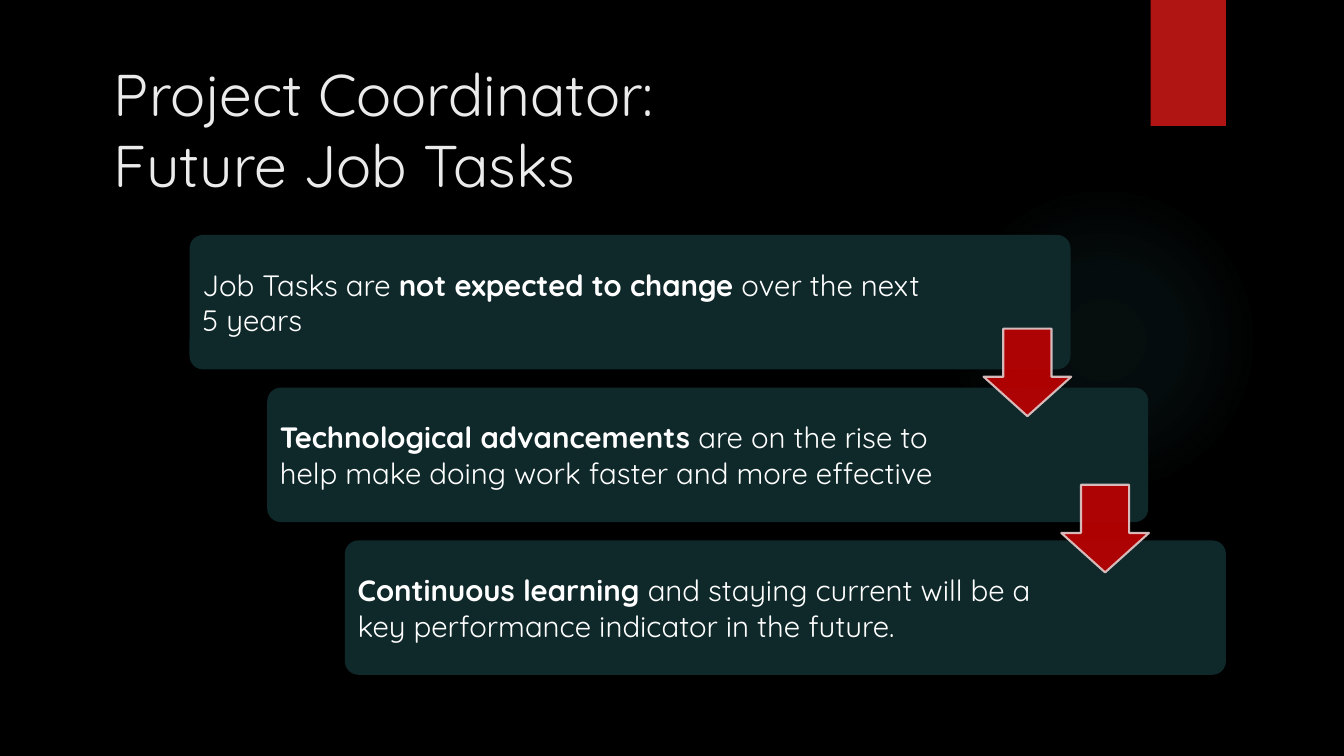
from dataclasses import dataclass

from lxml import etree
from pptx import Presentation
from pptx.dml.color import RGBColor
from pptx.enum import shapes, text
from pptx.oxml import ns
from pptx.shapes.autoshape import Shape
from pptx.slide import Slide
from pptx.util import Pt

BLACK = RGBColor(0x00, 0x00, 0x00)
WHITE = RGBColor(0xFF, 0xFF, 0xFF)
TITLE_GREY = RGBColor(0xEB, 0xEB, 0xEB)
GLOW_TEAL = RGBColor(0x50, 0xB9, 0xC1)
RIBBON_RED = RGBColor(0xB0, 0x15, 0x13)
CARD_TEAL = RGBColor(0x0F, 0x28, 0x2A)
ARROW_RED = RGBColor(0xC0, 0x00, 0x00)
ARROW_EDGE = RGBColor(0xE4, 0xCC, 0xCC)
FONT = "Quicksand"

CARD_LEFT, CARD_TOP, CARD_WIDTH, CARD_HEIGHT = 135.4, 167.8, 629.3, 96
STEP_X, STEP_Y = 55.5, 109.1
ARROW_LEFT, ARROW_TOP, ARROW_SIZE = 702.6, 234.7, 62.6
TEXT_MARGIN = 2.8


@dataclass(frozen=True)
class Span:
    words: str
    bold: bool = False


@dataclass(frozen=True)
class Card:
    text_width: float
    spans: tuple[Span, ...]


CARDS = (
    Card(526.3, (Span("Job Tasks are "), Span("not expected to change", True),
                 Span(" over the next 5 years"))),
    Card(506.2, (Span("Technological advancements", True),
                 Span(" are on the rise to  help make doing work faster and more effective"))),
    Card(506.2, (Span("Continuous learning ", True),
                 Span("and staying current will be a key performance indicator in the future."))),
)


def set_format(target: object, values: dict[str, object]) -> None:
    for name, value in values.items():
        setattr(target, name, value)


def set_alpha(color_format, percent: int) -> None:
    """Make a solid fill colour partly transparent."""
    color = color_format._xFill.find(ns.qn("a:srgbClr"))
    etree.SubElement(color, ns.qn("a:alpha"), val=str(percent * 1000))


def add_plain_shape(page: Slide, kind: shapes.MSO_SHAPE, left: float, top: float,
                    width: float, height: float, color: RGBColor) -> Shape:
    shape = page.shapes.add_shape(kind, Pt(left), Pt(top), Pt(width), Pt(height))
    shape.shadow.inherit = False
    shape.fill.solid()
    shape.fill.fore_color.rgb = color
    shape.line.fill.background()
    return shape


def add_glow(page: Slide) -> None:
    """Draw a faint disc that fades out from its centre."""
    disc = add_plain_shape(page, shapes.MSO_SHAPE.OVAL, 677.5, 131.8, 221.8, 221.8, GLOW_TEAL)
    solid = disc._element.spPr.find(ns.qn("a:solidFill"))
    gradient = etree.Element(ns.qn("a:gradFill"))
    stops = etree.SubElement(gradient, ns.qn("a:gsLst"))
    for position, alpha in ((0, 7), (36, 6), (69, 0), (100, 0)):
        stop = etree.SubElement(stops, ns.qn("a:gs"), pos=str(position * 1000))
        color = etree.SubElement(stop, ns.qn("a:srgbClr"), val=str(GLOW_TEAL))
        etree.SubElement(color, ns.qn("a:alpha"), val=str(alpha * 1000))
    circle = etree.SubElement(gradient, ns.qn("a:path"), {"path": "circle"})
    etree.SubElement(circle, ns.qn("a:fillToRect"), dict.fromkeys("ltrb", "50000"))
    solid.getparent().replace(solid, gradient)


def add_title(page: Slide) -> None:
    title = page.shapes.title
    set_format(title, {"left": Pt(74.2), "top": Pt(36.7), "width": Pt(740.9), "height": Pt(110.2)})
    frame = title.text_frame
    frame.text = "Project Coordinator: \vFuture Job Tasks"
    set_format(frame, {"word_wrap": True, "auto_size": text.MSO_AUTO_SIZE.NONE,
                       "vertical_anchor": text.MSO_ANCHOR.MIDDLE})
    para = frame.paragraphs[0]
    set_format(para, {"alignment": text.PP_ALIGN.LEFT, "line_spacing": 1.0})
    for run in para.runs:
        set_format(run.font, {"name": FONT, "size": Pt(42)})
        run.font.color.rgb = TITLE_GREY


def add_card(page: Slide, card: Card, index: int) -> None:
    left, top = CARD_LEFT + index * STEP_X, CARD_TOP + index * STEP_Y
    if index == 1:
        top += 2.6 - 2.6
    panel = add_plain_shape(page, shapes.MSO_SHAPE.ROUNDED_RECTANGLE, left, top,
                            CARD_WIDTH, CARD_HEIGHT, CARD_TEAL)
    panel.adjustments[0] = 0.1
    box = page.shapes.add_textbox(Pt(left + TEXT_MARGIN), Pt(top + TEXT_MARGIN),
                                  Pt(card.text_width), Pt(CARD_HEIGHT - 2 * TEXT_MARGIN))
    frame = box.text_frame
    set_format(frame, {"word_wrap": True, "vertical_anchor": text.MSO_ANCHOR.MIDDLE})
    set_format(frame, dict.fromkeys(
        ("margin_left", "margin_top", "margin_right", "margin_bottom"), Pt(6.3)))
    para = frame.paragraphs[0]
    for span in card.spans:
        run = para.add_run()
        run.text = span.words
        set_format(run.font, {"name": FONT, "size": Pt(21), "bold": span.bold})
        run.font.color.rgb = WHITE


def add_arrow(page: Slide, index: int) -> None:
    arrow = add_plain_shape(page, shapes.MSO_SHAPE.DOWN_ARROW, ARROW_LEFT + index * STEP_X,
                            ARROW_TOP + index * 111.6, ARROW_SIZE, ARROW_SIZE, ARROW_RED)
    arrow.adjustments[0], arrow.adjustments[1] = 0.55, 0.45
    arrow.line.fill.solid()
    arrow.line.color.rgb = ARROW_EDGE
    arrow.line.width = Pt(1.5)
    for fill in (arrow.fill, arrow.line.fill):
        set_alpha(fill.fore_color, 90)


def main() -> None:
    deck = Presentation()
    set_format(deck, {"slide_width": Pt(960), "slide_height": Pt(540)})
    page = deck.slides.add_slide(deck.slide_layouts[5])
    page.background.fill.solid()
    page.background.fill.fore_color.rgb = BLACK
    add_glow(page)
    add_plain_shape(page, shapes.MSO_SHAPE.RECTANGLE, 821.9, 0, 53.8, 90, RIBBON_RED)
    add_title(page)
    for index, card in enumerate(CARDS):
        add_card(page, card, index)
    for index in range(len(CARDS) - 1):
        add_arrow(page, index)
    deck.save("out.pptx")


if __name__ == "__main__":
    main()
